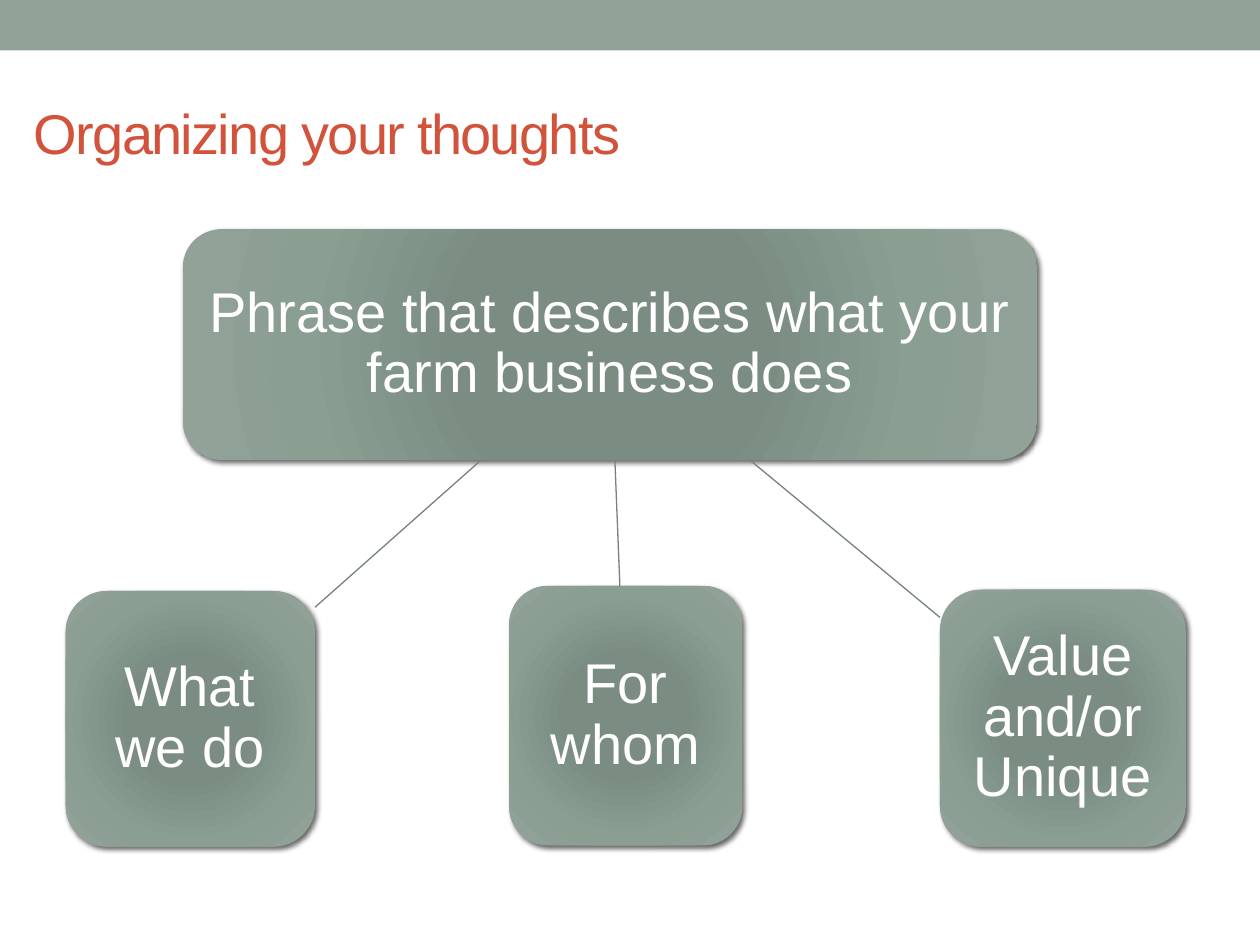
"""Build the slide that splits a farm business phrase into three parts."""
from dataclasses import dataclass

from lxml.etree import SubElement
from pptx import Presentation
from pptx.dml.color import RGBColor
from pptx.enum.shapes import MSO_CONNECTOR, MSO_SHAPE
from pptx.enum.text import MSO_ANCHOR, PP_ALIGN
from pptx.oxml import parse_xml
from pptx.oxml.ns import nsdecls, qn
from pptx.shapes.autoshape import Shape
from pptx.slide import Slide
from pptx.util import Inches, Length, Pt


@dataclass(frozen=True)
class Theme:
    font: str = "Arial"
    text_size: Length = Pt(32)
    band: str = "93A299"
    title: str = "D2533C"
    card_text: str = "FFFFFF"
    link: str = "76827B"
    link_width: Length = Pt(0.75)
    shadow: str = "000000"
    card_stops: tuple = ((0, "7B8E82"), (34, "7B8D83"), (70, "8A9E92"), (100, "93A299"))


@dataclass(frozen=True)
class Box:
    left: float
    top: float
    width: float
    height: float

    def lengths(self) -> tuple:
        return tuple(map(grid, (self.left, self.top, self.width, self.height)))


@dataclass(frozen=True)
class Card:
    text: str
    box: Box


@dataclass(frozen=True)
class Branch:
    card: Card
    start: tuple
    end: tuple


THEME = Theme()
COLUMNS, ROWS = 100, 75
CELL = Inches(0.1)
BAND = Box(0, 0, COLUMNS, 4)
TITLE = Card("Organizing your thoughts", Box(1.7, 3.5, 94.8, 14))
HUB = Card("Phrase that describes what your farm business does", Box(14.5, 18.2, 67.8, 18.3))
HUB_BOTTOM = HUB.box.top + HUB.box.height
BRANCHES = (
    Branch(Card("For whom", Box(40.4, 46.5, 18.5, 20.6)), (48.8, HUB_BOTTOM), (49.2, 46.5)),
    Branch(Card("Value and/or Unique", Box(74.6, 46.8, 19.5, 20.4)), (59.5, HUB_BOTTOM), (74.6, 49)),
    Branch(Card("What we do", Box(5.2, 46.9, 19.8, 20.3)), (38.2, HUB_BOTTOM), (25, 48.2)),
)


def grid(cells: float) -> Length:
    return Length(round(cells * CELL))


def write_text(shape: Shape, text: str, color: str, alignment: PP_ALIGN) -> None:
    frame = shape.text_frame
    frame.word_wrap = True
    frame.vertical_anchor = MSO_ANCHOR.MIDDLE
    paragraph = frame.paragraphs[0]
    paragraph.text = text
    paragraph.alignment = alignment
    paragraph.font.name = THEME.font
    paragraph.font.size = THEME.text_size
    paragraph.font.color.rgb = RGBColor.from_string(color)


def draw_band(slide: Slide) -> None:
    shape = slide.shapes.add_shape(MSO_SHAPE.RECTANGLE, *BAND.lengths())
    shape.shadow.inherit = False
    shape.fill.solid()
    shape.fill.fore_color.rgb = RGBColor.from_string(THEME.band)
    shape.line.fill.background()


def draw_title(slide: Slide) -> None:
    shape = slide.shapes.add_textbox(*TITLE.box.lengths())
    write_text(shape, TITLE.text, THEME.title, PP_ALIGN.LEFT)
    run = shape.text_frame.paragraphs[0].runs[0]
    run._r.get_or_add_rPr().set("spc", "-100")


def style_card(shape: Shape) -> None:
    stops = "".join(
        f'<a:gs pos="{position * 1000}"><a:srgbClr val="{color}"/></a:gs>'
        for position, color in THEME.card_stops
    )
    gradient = parse_xml(
        f'<a:gradFill {nsdecls("a")} rotWithShape="1"><a:gsLst>{stops}</a:gsLst>'
        '<a:path path="circle"><a:fillToRect l="100000" t="100000" r="100000" b="100000"/>'
        "</a:path></a:gradFill>"
    )
    effects = parse_xml(
        f'<a:effectLst {nsdecls("a")}><a:outerShdw blurRad="{Pt(3)}" dist="{Pt(2)}" '
        f'dir="2700000" algn="tl" rotWithShape="0"><a:srgbClr val="{THEME.shadow}">'
        '<a:alpha val="60000"/></a:srgbClr></a:outerShdw></a:effectLst>'
    )
    shape.line.fill.background()
    properties = shape.element.spPr
    properties.find(qn("a:prstGeom")).addnext(gradient)
    properties.append(effects)


def draw_card(slide: Slide, card: Card) -> None:
    shape = slide.shapes.add_shape(MSO_SHAPE.ROUNDED_RECTANGLE, *card.box.lengths())
    style_card(shape)
    write_text(shape, card.text, THEME.card_text, PP_ALIGN.CENTER)
    frame = shape.text_frame
    frame.margin_left = frame.margin_right = Inches(0.09)
    frame.margin_top = frame.margin_bottom = Inches(0.09)
    frame.paragraphs[0].line_spacing = 0.9


def draw_branch(slide: Slide, branch: Branch) -> None:
    points = map(grid, branch.start + branch.end)
    link = slide.shapes.add_connector(MSO_CONNECTOR.STRAIGHT, *points)
    link.line.color.rgb = RGBColor.from_string(THEME.link)
    link.line.width = THEME.link_width
    SubElement(link.element.spPr, qn("a:effectLst"))
    draw_card(slide, branch.card)


def main() -> None:
    presentation = Presentation()
    presentation.slide_width = grid(COLUMNS)
    presentation.slide_height = grid(ROWS)
    slide = presentation.slides.add_slide(presentation.slide_layouts[6])
    draw_band(slide)
    draw_title(slide)
    draw_card(slide, HUB)
    for branch in BRANCHES:
        draw_branch(slide, branch)
    presentation.save("out.pptx")


if __name__ == "__main__":
    main()
